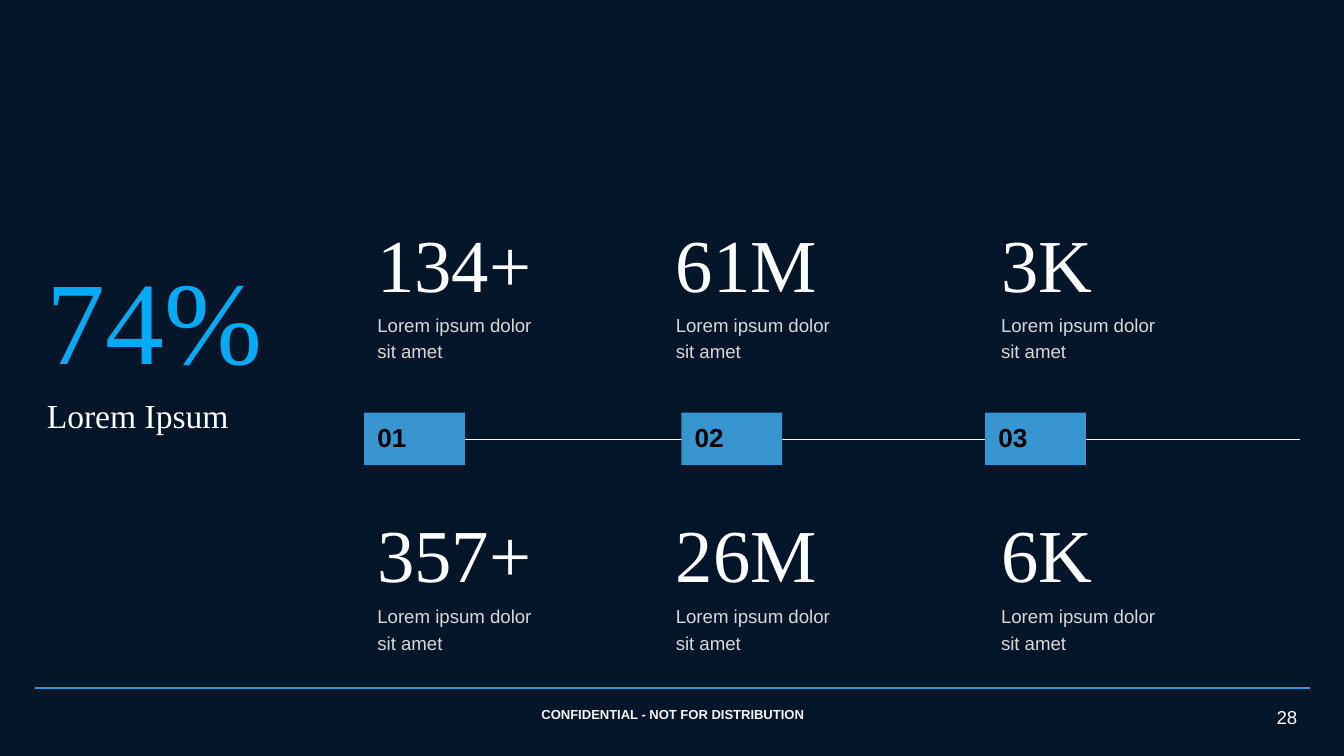
from lxml.etree import SubElement
from pptx import Presentation
from pptx.dml.color import RGBColor
from pptx.enum.shapes import MSO_CONNECTOR, MSO_SHAPE
from pptx.enum.text import MSO_ANCHOR, PP_ALIGN
from pptx.oxml.ns import qn
from pptx.util import Inches, Pt

COLORS = {
    "background": "031529",
    "blue": "3895D0",
    "bright": "00AAF6",
    "white": "FFFFFF",
    "footer": "F5F5F5",
    "caption": "D8D8D8",
    "black": "000000",
}
SERIF, SANS = "Times New Roman", "Arial"

deck = Presentation()
deck.slide_width = Inches(10)
deck.slide_height = Inches(10 * 9 / 16)
page = deck.slides.add_slide(deck.slide_layouts[6])
page.background.fill.solid()
page.background.fill.fore_color.rgb = RGBColor.from_string(COLORS["background"])


def add_text(text, at, size, color, font=SANS, bold=False, fill=None, align=PP_ALIGN.LEFT,
             anchor=MSO_ANCHOR.TOP, spacing=None, inset_x=0.1, inset_y=0.05):
    """Add a text box, or a filled rectangle when fill is given."""
    place = [Inches(length) for length in at]
    if fill:
        box = page.shapes.add_shape(MSO_SHAPE.RECTANGLE, *place)
        box.shadow.inherit = False
        box.fill.solid()
        box.fill.fore_color.rgb = RGBColor.from_string(COLORS[fill])
        box.line.fill.background()
    else:
        box = page.shapes.add_textbox(*place)
    frame = box.text_frame
    frame.word_wrap = True
    frame.vertical_anchor = anchor
    frame.margin_left = frame.margin_right = Inches(inset_x)
    frame.margin_top = frame.margin_bottom = Inches(inset_y)
    para = frame.paragraphs[0]
    para.alignment = align
    para.line_spacing = spacing
    span = para.add_run()
    span.text = text
    span.font.name, span.font.size, span.font.bold = font, Pt(size), bold
    span.font.color.rgb = RGBColor.from_string(COLORS[color])


def add_rule(left, right, top, color):
    """Add a thin horizontal line."""
    rule = page.shapes.add_connector(
        MSO_CONNECTOR.STRAIGHT, Inches(left), Inches(top), Inches(right), Inches(top))
    rule.line.color.rgb = RGBColor.from_string(COLORS[color])
    rule.line.width = Pt(0.75)
    SubElement(rule._element.spPr, qn("a:effectLst"))


# Footer
add_text("CONFIDENTIAL - NOT FOR DISTRIBUTION", (3.88, 5.12, 2.25, 0.25), 7, "footer",
         bold=True, align=PP_ALIGN.CENTER, anchor=MSO_ANCHOR.BOTTOM, inset_x=0, inset_y=0)
add_rule(0.26, 9.75, 5.12, "blue")
add_text("28", (9.26, 5.12, 0.49, 0.43), 10, "white", align=PP_ALIGN.RIGHT,
         anchor=MSO_ANCHOR.MIDDLE, inset_y=0.1)

# Headline figure
add_text("74%", (0.25, 1.79, 2.01, 1.16), 63, "bright", font=SERIF)
add_text("Lorem Ipsum", (0.25, 2.89, 2.35, 0.4), 18, "white", font=SERIF)

# Timeline, with its steps in front of the line
add_rule(3.01, 9.67, 3.27, "white")
for number, left in (("01", 2.71), ("02", 5.07), ("03", 7.33)):
    add_text(number, (left, 3.07, 0.75, 0.39), 14, "black", bold=True, fill="blue",
             anchor=MSO_ANCHOR.MIDDLE, spacing=0.9)

# Figures above and below the timeline
column_lefts = (2.71, 4.93, 7.35)
figure_rows = (
    (1.57, 2.25, ("134+", "61M", "3K")),
    (3.73, 4.42, ("357+", "26M", "6K")),
)
for figure_top, caption_top, figures in figure_rows:
    for left, figure in zip(column_lefts, figures):
        add_text(figure, (left, figure_top, 1.47, 0.77), 40, "white", font=SERIF)
        add_text("Lorem ipsum dolor sit amet", (left, caption_top, 1.47, 0.47), 10, "caption",
                 spacing=1.2)

deck.save("out.pptx")
